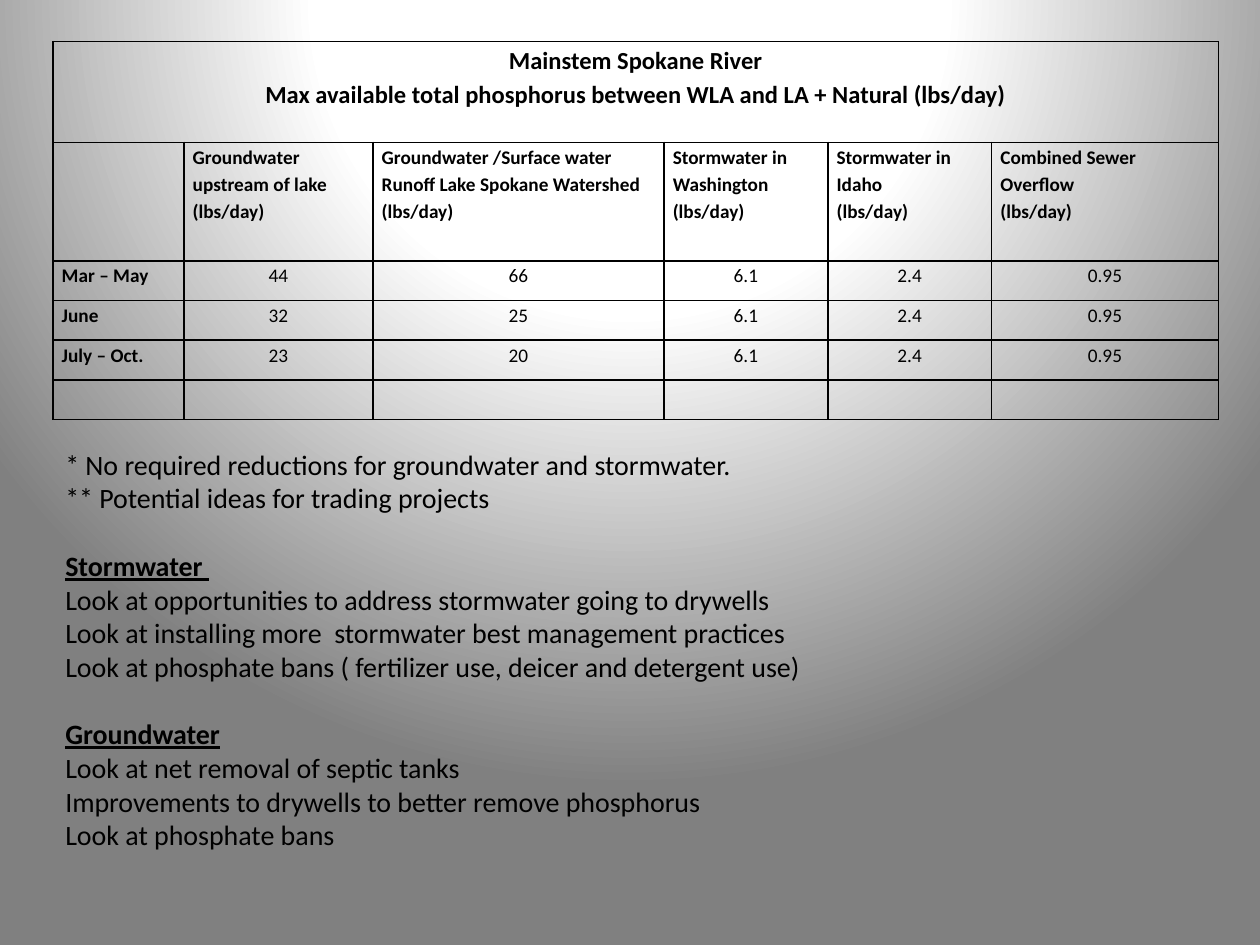
from pptx import Presentation
from pptx.dml.color import RGBColor
from pptx.enum import text
from pptx.oxml import parse_xml
from pptx.oxml import ns
from pptx.util import Inches, Pt

FONT = "Calibri"
COLORS = {"ink": "000000", "glow": "FFFFFF", "edge": "808080"}

COLUMNS = [1.04, 1.5, 2.31, 1.3, 1.3, 1.8]
ROWS = [0.8, 0.94] + [0.315] * 4

# In cell text, \v is a line break and \n starts a paragraph
TITLE = ("Mainstem Spokane River\v"
         "Max available total phosphorus between WLA and LA + Natural (lbs/day)")
HEADERS = [
    "",
    "Groundwater upstream of lake\n(lbs/day)",
    "Groundwater /Surface water Runoff Lake Spokane Watershed (lbs/day)",
    "Stormwater in\nWashington\n(lbs/day)",
    "Stormwater in\vIdaho\n(lbs/day)",
    "Combined Sewer Overflow\n(lbs/day)",
]
LOADS = [
    ["Mar – May", "44", "66", "6.1", "2.4", "0.95"],
    ["June", "32", "25", "6.1", "2.4", "0.95"],
    ["July – Oct.", "23", "20", "6.1", "2.4", "0.95"],
]
FOOTNOTES = ["* No required reductions for groundwater and stormwater.",
             "** Potential ideas for trading projects"]
IDEAS = {
    "Stormwater ": [
        "Look at opportunities to address stormwater going to drywells",
        "Look at installing more  stormwater best management practices",
        "Look at phosphate bans ( fertilizer use, deicer and detergent use)",
    ],
    "Groundwater": [
        "Look at net removal of septic tanks",
        "Improvements to drywells to better remove phosphorus",
        "Look at phosphate bans",
    ],
}


def style_runs(p, size, bold=False, underline=False):
    for r in p.runs:
        r.font.name = FONT
        r.font.size = Pt(size)
        r.font.bold = bold
        r.font.underline = underline
        r.font.color.rgb = RGBColor.from_string(COLORS["ink"])


def set_background(s):
    """Radial gradient centred above the top edge."""
    stops = "".join(
        f'<a:gs pos="{pos * 1000}"><a:srgbClr val="{COLORS[name]}"/></a:gs>'
        for pos, name in [(0, "glow"), (40, "glow"), (100, "edge")])
    bg = parse_xml(
        f'<p:bg {ns.nsdecls("p", "a")}><p:bgPr><a:gradFill rotWithShape="1">'
        f'<a:gsLst>{stops}</a:gsLst><a:path path="circle">'
        '<a:fillToRect l="50000" t="-80000" r="50000" b="180000"/></a:path>'
        '</a:gradFill><a:effectLst/></p:bgPr></p:bg>')
    s.element.cSld.insert(0, bg)


def add_borders(cell):
    tc_pr = cell._tc.get_or_add_tcPr()
    for i, side in enumerate(["lnL", "lnR", "lnT", "lnB"]):
        tc_pr.insert(i, parse_xml(
            f'<a:{side} {ns.nsdecls("a")} w="{Pt(1)}"><a:solidFill>'
            f'<a:srgbClr val="{COLORS["ink"]}"/></a:solidFill></a:{side}>'))


def fill_cell(cell, words, size=11, bold=False, centred=False):
    cell.text_frame.text = words
    for p in cell.text_frame.paragraphs:
        p.line_spacing = 1.15
        if centred:
            p.alignment = text.PP_ALIGN.CENTER
        style_runs(p, size, bold)


def add_load_table(s):
    table = s.shapes.add_table(len(ROWS), len(COLUMNS), Inches(0.42), Inches(0.33),
                               Inches(sum(COLUMNS)), Inches(sum(ROWS))).table
    table.first_row = table.horz_banding = False
    for column, width in zip(table.columns, COLUMNS):
        column.width = Inches(width)
    for row, height in zip(table.rows, ROWS):
        row.height = Inches(height)
    for cell in table.iter_cells():
        cell.margin_left = cell.margin_right = Inches(0.07)
        cell.margin_top = cell.margin_bottom = 0
        cell.fill.background()
        add_borders(cell)

    # Title across all columns
    table.cell(0, 0).merge(table.cell(0, len(COLUMNS) - 1))
    fill_cell(table.cell(0, 0), TITLE, 14, bold=True, centred=True)

    # Headers and seasonal loads; the last row stays empty
    for c, words in enumerate(HEADERS):
        if words:
            fill_cell(table.cell(1, c), words, bold=True)
    for r, loads in enumerate(LOADS, start=2):
        for c, words in enumerate(loads):
            fill_cell(table.cell(r, c), words, bold=c == 0, centred=c > 0)


def add_notes_text(s):
    tf = s.shapes.add_textbox(Inches(0.42), Inches(3.5),
                              Inches(9.17), Inches(3.33)).text_frame
    tf.word_wrap = True
    lines = list(FOOTNOTES)
    for heading, ideas in IDEAS.items():
        lines += [heading] + ideas
    tf.text = "\n".join(lines)
    for p in tf.paragraphs:
        is_heading = p.text in IDEAS
        style_runs(p, 16, bold=is_heading, underline=is_heading)
        if is_heading:
            p.space_before = Pt(19.5)


def main():
    prs = Presentation()
    prs.slide_width, prs.slide_height = Inches(10), Inches(7.5)
    s = prs.slides.add_slide(prs.slide_layouts[6])
    set_background(s)
    add_load_table(s)
    add_notes_text(s)
    prs.save("out.pptx")


if __name__ == "__main__":
    main()
